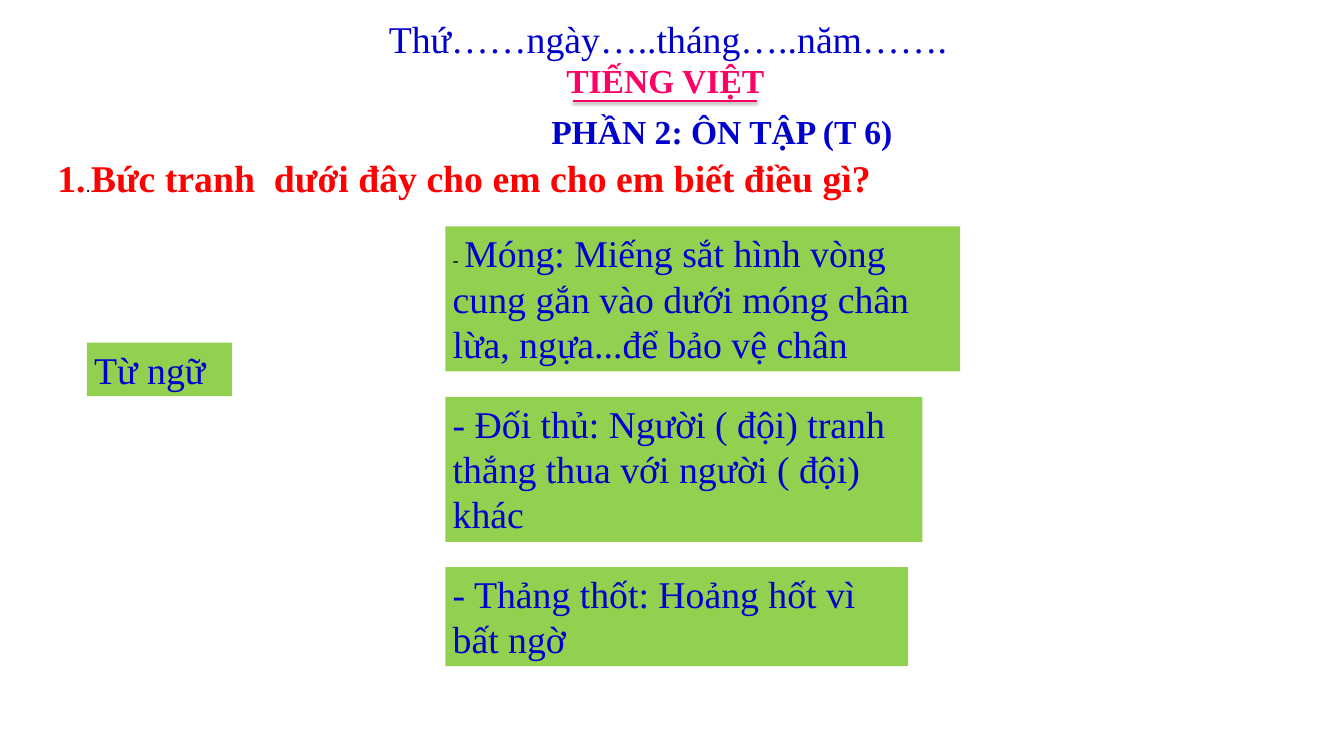
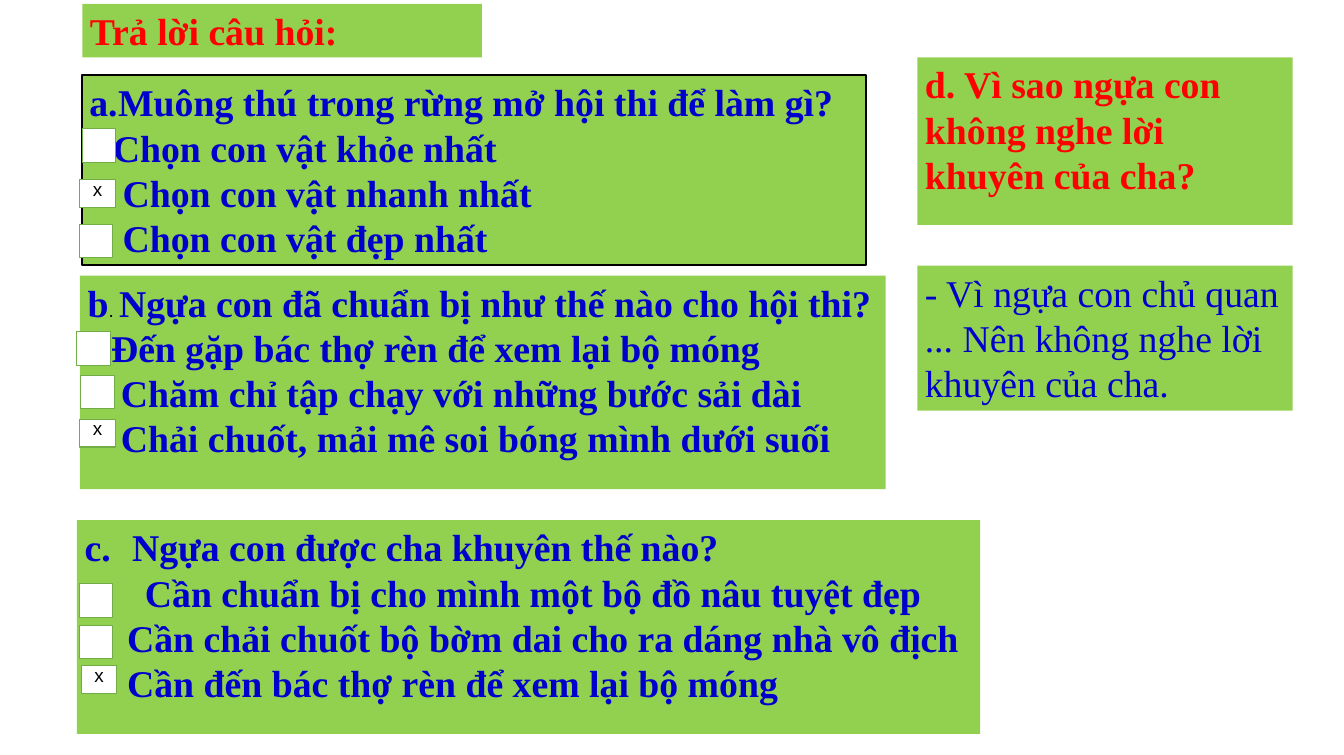
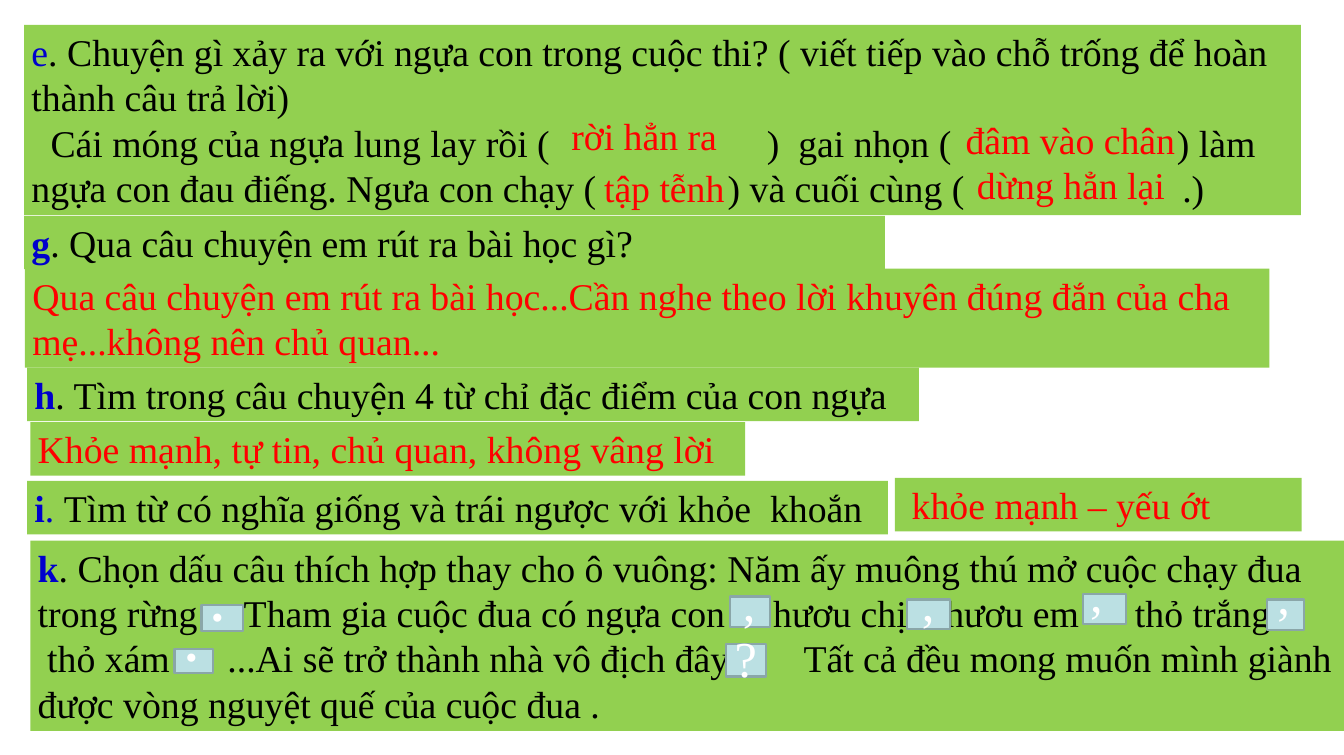
from dataclasses import dataclass
from lxml import etree
from pptx import Presentation
from pptx.dml.color import RGBColor
from pptx.enum import shapes, text
from pptx.oxml import ns
from pptx.util import Cm, Pt

GREEN = RGBColor(0x92, 0xD0, 0x50)
BLUE = RGBColor(0x00, 0x00, 0xCC)
RED = RGBColor(0xFF, 0x00, 0x00)
PINK = RGBColor(0xFF, 0x00, 0x66)
BLACK = RGBColor(0x00, 0x00, 0x00)
WHITE = RGBColor(0xFF, 0xFF, 0xFF)
LEAF = RGBColor(0x70, 0xAD, 0x47)
PALE = RGBColor(0xBB, 0xE0, 0xE3)
SLATE = RGBColor(0x8A, 0xA6, 0xA8)


@dataclass
class Style:
    color: RGBColor
    bold: bool = False
    size: int = 36
    name: str = "Times New Roman"


@dataclass
class Para:
    runs: list
    left: float = 0
    indent: float = 0
    bullet: str = ""
    start: int = 1
    tabs: tuple = ()


PLAIN, STRONG = Style(BLUE), Style(BLUE, True)
ANSWER, QUESTION = Style(RED), Style(RED, True)
BODY, SMALL = Style(BLACK), Style(BLACK, size=18, name="Arial")
SUBJECT, LESSON = Style(PINK, True, 32), Style(BLUE, True, 32)
MARK, DOT = Style(WHITE, size=48), Style(WHITE, True, 48)


def para(content, style, **layout):
    return Para([(content, style)], **layout)


def choice(content, left=1.12):
    return para(content, STRONG, left=left, indent=-left, bullet="-")


def lettered(letter, content, style=STRONG):
    return Para([(letter, style), (content, BODY)])


DATE = ((12.83, 0.41, 19.48, 1.8), para("Thứ……ngày…..tháng…..năm…….", PLAIN))
SUBJECT_NAME = ((18.8, 1.9, 7.24, 1.63), para("TIẾNG VIỆT", SUBJECT))
UNDERLINE = (19.28, 25.48, 3.4)
LESSON_TITLE = ((16.26, 3.53, 16.05, 1.78), para("PHẦN 2: ÔN TẬP (T 6)", LESSON))
PICTURE_QUESTION = ((1.68, 5.08, 28.35, 1.8), Para([
    ("1.", QUESTION), (".", SMALL),
    ("Bức tranh  dưới đây cho em cho em biết điều gì?", QUESTION)]))
WORDS_LABEL = ((2.92, 11.53, 4.88, 1.8), para("Từ ngữ", PLAIN))
WORDS_LEFT, WORDS_TOP, WORDS_GAP = 14.98, 7.62, 0.85
WORDS = [
    (17.32, 4.88, Para([("- ", SMALL), (
        "Móng: Miếng sắt hình vòng cung gắn vào dưới móng chân lừa, ngựa...để bảo vệ chân", PLAIN)])),
    (16.05, 4.88, para("- Đối thủ: Người ( đội) tranh thắng thua với người ( đội) khác", PLAIN)),
    (15.57, 3.33, para("- Thảng thốt: Hoảng hốt vì bất ngờ", PLAIN)),
]

QUIZ_TITLE = ((2.77, 0.13, 13.44, 1.8), para("Trả lời câu hỏi:", QUESTION))
QUIZ = [
    ((2.75, 2.53, 26.39, 6.4), [
        para("Muông thú trong rừng mở hội thi để làm gì?", STRONG, left=0.97, indent=-0.97, bullet="a."),
        choice("Chọn con vật khỏe nhất", 0.79),
        choice("Chọn con vật nhanh nhất"),
        choice("Chọn con vật đẹp nhất")]),
    ((2.69, 9.27, 27.1, 7.19), [
        Para([("b", STRONG), (". ", SMALL), ("Ngựa con đã chuẩn bị như thế nào cho hội thi?", STRONG)]),
        choice("Đến gặp bác thợ rèn để xem lại bộ móng", 0.79),
        choice("Chăm chỉ tập chạy với những bước sải dài"),
        choice("Chải chuốt, mải mê soi bóng mình dưới suối")]),
    ((2.59, 17.5, 30.38, 7.19), [
        para("Ngựa con được cha khuyên thế nào?", STRONG, left=1.6, indent=-1.6, bullet="a.", start=3),
        para("Cần chuẩn bị cho mình một bộ đồ nâu tuyệt đẹp", STRONG, left=2.03, indent=-1.71, bullet="-"),
        choice("Cần chải chuốt bộ bờm dai cho ra dáng nhà vô địch", 1.43),
        choice("Cần đến bác thợ rèn để xem lại bộ móng", 1.43)]),
    ((30.86, 1.93, 12.62, 5.64), [
        para("d. Vì sao ngựa con không nghe lời khuyên của cha?", QUESTION)]),
]
QUIZ_ANSWER = ((30.86, 8.94, 12.62, 4.88), para(
    "- Vì ngựa con chủ quan ... Nên không nghe lời khuyên của cha.", PLAIN))
TICKED = [(2.74, 22.4), (2.69, 14.1), (2.69, 6.05)]
UNTICKED = [(2.77, 4.32), (2.67, 7.54), (2.59, 11.15), (2.72, 12.62), (2.67, 19.63), (2.67, 21.03)]

STORY = [
    ((0.81, 0.84, 42.95, 6.4), [
        lettered("e", ". Chuyện gì xảy ra với ngựa con trong cuộc thi? ( viết tiếp vào chỗ trống "
                 "để hoàn thành câu trả lời)", PLAIN),
        para("\tCái móng của ngựa lung lay rồi (\t)  gai nhọn (\t) làm", BODY,
             tabs=(0.64, 24.74, 38.53)),
        para("ngựa con đau điếng. Ngưa con chạy (\t) và cuối cùng (\t.)", BODY, tabs=(23.42, 38.71))]),
    ((0.84, 9.04, 41.86, 3.33), [para(
        "Qua câu chuyện em rút ra bài học...Cần nghe theo lời khuyên đúng đắn của cha "
        "mẹ...không nên chủ quan...", ANSWER)]),
    ((0.91, 12.37, 30, 1.8), [lettered("h", ". Tìm trong câu chuyện 4 từ chỉ đặc điểm của con ngựa")]),
    ((1.02, 14.2, 24.05, 1.8), [para("Khỏe mạnh, tự tin, chủ quan, không vâng lời", ANSWER)]),
    ((0.91, 16.18, 28.96, 1.8), [Para([
        ("i", STRONG), (". ", PLAIN), ("Tìm từ có nghĩa giống và trái ngược với khỏe  khoắn", BODY)])]),
    ((30.1, 16.08, 13.69, 1.8), [para("khỏe mạnh – yếu ớt", ANSWER, indent=0.32)]),
    ((1.02, 18.19, 44.65, 6.4), [
        lettered("k", ". Chọn dấu câu thích hợp thay cho ô vuông: Năm ấy muông thú mở cuộc chạy đua"),
        para("trong rừng\tTham gia cuộc đua có ngựa con\thươu chị\thươu em\tthỏ trắng", BODY,
             tabs=(6.93, 24.74, 30.53, 36.91)),
        para("\tthỏ xám\t...Ai sẽ trở thành nhà vô địch đây\tTất cả đều mong muốn mình giành "
             "được vòng nguyệt quế của cuộc đua .", BODY, tabs=(0.32, 6.38, 25.76))]),
    ((0.81, 7.26, 28.96, 1.8), [lettered("g", ". Qua câu chuyện em rút ra bài học gì?")]),
]
BLANK_ANSWERS = [
    ((18.97, 3.66, 8.74, 1.8), "rời hẳn ra"),
    ((32.23, 3.81, 11.25, 1.8), "đâm vào chân"),
    ((32.61, 5.31, 9.02, 1.8), "dừng hẳn lại"),
    ((20.07, 5.41, 6.12, 1.8), "tập tễnh"),
]
PUNCTUATION = [
    ((24.56, 20.07, 1.35, 1.04), ",", MARK, (24.74, 19.08, 1.35)),
    ((5.87, 21.82, 1.3, 0.81), ".", DOT, (5.99, 20.45, 0.97)),
    ((42.62, 20.17, 1.24, 1.02), ",", MARK, (42.72, 18.85, 1.78)),
    ((30.51, 20.17, 1.45, 0.99), ",", MARK, (30.76, 19.08, 2.11)),
    ((6.78, 20.35, 1.4, 0.89), ".", DOT, (6.88, 19.08, 0.61)),
    ((24.41, 21.67, 1.35, 1.09), "?", MARK, (24.46, 20.96, 0.79)),
    ((36.42, 19.99, 1.45, 0.99), ",", MARK, (36.42, 18.8, 2.11)),
]
MARK_HEIGHT = 2.31


def child(parent, tag, **attrs):
    return etree.SubElement(parent, ns.qn(tag), {k: str(v) for k, v in attrs.items()})


def set_font(font, style):
    font.name, font.size, font.bold = style.name, Pt(style.size), style.bold
    font.color.rgb = style.color


def set_layout(pPr, item):
    if item.tabs:
        stops = child(pPr, "a:tabLst")
        for pos in item.tabs:
            child(stops, "a:tab", pos=Cm(pos), algn="l")
        return
    pPr.set("marL", str(Cm(item.left)))
    pPr.set("indent", str(Cm(item.indent)))
    if item.bullet == "a.":
        child(pPr, "a:buFont", typeface="+mj-lt")
        child(pPr, "a:buAutoNum", type="alphaLcPeriod", startAt=item.start)
    elif item.bullet:
        child(pPr, "a:buFontTx")
        child(pPr, "a:buChar", char=item.bullet)
    else:
        child(pPr, "a:buNone")


def write_para(p, item, align):
    set_layout(p._p.get_or_add_pPr(), item)
    p.alignment = align
    p.space_before = Pt(0)
    for content, style in item.runs:
        r = p.add_run()
        r.text = content
        if len(item.runs) > 1:
            set_font(r.font, style)
    if len(item.runs) == 1:
        set_font(p.font, item.runs[0][1])


def write(sp, items, align=text.PP_ALIGN.LEFT, anchor=text.MSO_ANCHOR.TOP):
    tf = sp.text_frame
    tf.word_wrap, tf.auto_size = True, text.MSO_AUTO_SIZE.NONE
    tf.vertical_anchor = anchor
    for i, item in enumerate(items):
        write_para(tf.add_paragraph() if i else tf.paragraphs[0], item, align)


def paint(sp, fill, line=None, width=1):
    sp.fill.solid()
    sp.fill.fore_color.rgb = fill
    if line is not None:
        sp.line.color.rgb = line
        sp.line.width = Pt(width)


def add_text(slide, box, *items, fill=None):
    sp = slide.shapes.add_textbox(*map(Cm, box))
    if fill is not None:
        paint(sp, fill)
    write(sp, items)


def fill_placeholder(sp, box, items, align=text.PP_ALIGN.LEFT, fill=None):
    sp.left, sp.top, sp.width, sp.height = map(Cm, box)
    if fill is not None:
        paint(sp, fill)
    write(sp, items, align)


def add_square(slide, box, fill, line, width):
    sp = slide.shapes.add_shape(shapes.MSO_SHAPE.RECTANGLE, *map(Cm, box))
    sp.shadow.inherit = False
    paint(sp, fill, line, width)
    return sp


def build_words(prs):
    slide = prs.slides.add_slide(prs.slide_layouts[5])
    title = slide.shapes.title
    box, item = LESSON_TITLE
    fill_placeholder(title, box, [item], text.PP_ALIGN.CENTER)
    tf = title.text_frame
    tf.margin_left = tf.margin_right = Cm(0.41)
    tf.margin_top = tf.margin_bottom = Cm(0.2)
    for box, item in (DATE, SUBJECT_NAME, PICTURE_QUESTION):
        add_text(slide, box, item)
    x1, x2, y = map(Cm, UNDERLINE)
    rule = slide.shapes.add_connector(shapes.MSO_CONNECTOR.STRAIGHT, x1, y, x2, y)
    rule.line.color.rgb = PINK
    rule.line.width = Pt(2)
    effects = child(rule._element.spPr, "a:effectLst")
    shadow = child(effects, "a:outerShdw", blurRad=Pt(3.1), dist=Pt(1.6), dir=5400000, rotWithShape=0)
    child(child(shadow, "a:srgbClr", val="000000"), "a:alpha", val=38000)
    add_text(slide, *WORDS_LABEL, fill=GREEN)
    top = WORDS_TOP
    for width, height, item in WORDS:
        add_text(slide, (WORDS_LEFT, top, width, height), item, fill=GREEN)
        top += height + WORDS_GAP


def build_quiz(prs):
    slide = prs.slides.add_slide(prs.slide_layouts[4])
    box, item = QUIZ_TITLE
    fill_placeholder(slide.shapes.title, box, [item], fill=GREEN)
    bodies = list(slide.placeholders)[1:]
    for sp, (box, items) in zip(bodies, QUIZ):
        fill_placeholder(sp, box, items, fill=GREEN)
    paint(bodies[0], GREEN, BLACK, 2)
    add_text(slide, *QUIZ_ANSWER, fill=GREEN)
    for x, y in TICKED:
        sp = add_square(slide, (x, y, 1.19, 0.94), WHITE, LEAF, 1)
        sp.text_frame.margin_top, sp.text_frame.margin_bottom = 0, Cm(0.34)
        write(sp, [para("x", SMALL)], text.PP_ALIGN.CENTER, text.MSO_ANCHOR.MIDDLE)
    for x, y in UNTICKED:
        add_square(slide, (x, y, 1.12, 1.14), WHITE, LEAF, 1)


def build_story(prs):
    slide = prs.slides.add_slide(prs.slide_layouts[6])
    for box, items in STORY:
        add_text(slide, box, *items, fill=GREEN)
    for box, content in BLANK_ANSWERS:
        add_text(slide, box, para(content, ANSWER))
    for square, sign, style, place in PUNCTUATION:
        add_square(slide, square, PALE, SLATE, 2)
        add_text(slide, (*place, MARK_HEIGHT), para(sign, style))


def main():
    prs = Presentation()
    prs.slide_width, prs.slide_height = Cm(45.21), Cm(25.4)
    build_words(prs)
    build_quiz(prs)
    build_story(prs)
    prs.save("out.pptx")


if __name__ == "__main__":
    main()
